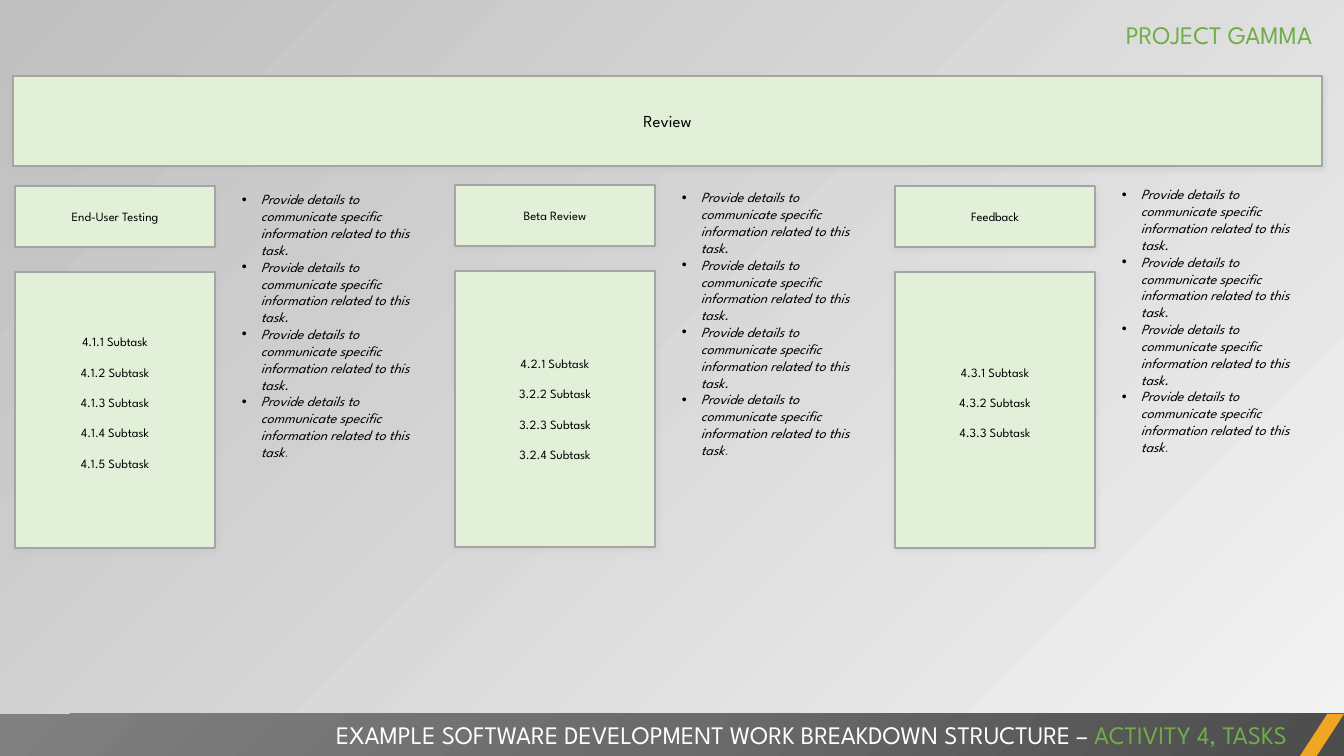
from pptx import Presentation
from pptx.dml.color import RGBColor
from pptx.enum.shapes import MSO_SHAPE as Shape
from pptx.enum.text import MSO_ANCHOR as Anchor, PP_ALIGN as Align
from pptx.oxml import parse_xml
from pptx.oxml.ns import nsdecls
from pptx.util import Pt

PX = 914400 / 100.8
FONT = "League Spartan"
COLORS = {
    "black": "000000", "white": "FFFFFF", "green": "70AD47", "blue": "2E75B6",
    "box": "E2F0D9", "border": "A5A5A5", "shadow": "BFBFBF", "accent": "F0A622",
    "light": "F2F2F2", "grey": "BFBFBF",
    "bar dark": "4C4C4C", "bar middle": "6B6B6B", "bar light": "808080",
}
DETAIL = "Provide details to communicate specific information related to this task"


def write(shape, paragraphs, size=9, align=Align.CENTER, anchor=Anchor.MIDDLE,
          italic=False, bullet=False, gap=0, blank_below=0):
    """Fill a shape with paragraphs, each a list of (text, colour name)."""
    frame = shape.text_frame
    frame.word_wrap = True
    frame.vertical_anchor = anchor
    frame.margin_bottom = round((5 + blank_below) * PX)
    for i, runs in enumerate(paragraphs):
        para = frame.add_paragraph() if i else frame.paragraphs[0]
        para.alignment = align
        if i < len(paragraphs) - 1:
            para.space_after = Pt(gap)
        if bullet:
            props = para._p.get_or_add_pPr()
            props.set("marL", str(round(19 * PX)))
            props.set("indent", str(round(-19 * PX)))
            props.append(parse_xml(f'<a:buFont {nsdecls("a")} typeface="Arial"/>'))
            props.append(parse_xml(f'<a:buChar {nsdecls("a")} char="•"/>'))
        for text, color in runs:
            run = para.add_run()
            run.text = text
            run.font.name = FONT
            run.font.size = Pt(size)
            run.font.italic = italic
            run.font.color.rgb = RGBColor.from_string(COLORS[color])


def add_part(kind, x, y, w, h, fill=None, framed=False):
    """Add a text box (kind None) or a preset shape, placed in px."""
    place = [round(v * PX) for v in (x, y, w, h)]
    if kind is None:
        return slide.shapes.add_textbox(*place)
    part = slide.shapes.add_shape(kind, *place)
    part.shadow.inherit = False
    part.fill.solid()
    part.fill.fore_color.rgb = RGBColor.from_string(COLORS[fill])
    part.line.fill.background()
    if framed:
        part.line.color.rgb = RGBColor.from_string(COLORS["border"])
        part.line.width = Pt(1)
        part._element.spPr.find(".//{*}effectLst").append(parse_xml(
            f'<a:outerShdw {nsdecls("a")} blurRad="50800" dist="12700" dir="5400000" '
            f'algn="t" rotWithShape="0"><a:srgbClr val="{COLORS["shadow"]}">'
            '<a:alpha val="40000"/></a:srgbClr></a:outerShdw>'))
    return part


prs = Presentation()
prs.slide_width = round(1344 * PX)
prs.slide_height = round(756 * PX)
slide = prs.slides.add_slide(prs.slide_layouts[6])

# Background, light at the bottom right
backdrop = slide.background.fill
backdrop.gradient()
backdrop.gradient_angle = 135
for stop, name in zip(backdrop.gradient_stops, ("light", "grey")):
    stop.color.rgb = RGBColor.from_string(COLORS[name])
light_color = slide._element.find(".//{*}bg").find(".//{*}srgbClr")
light_color.append(parse_xml(f'<a:alpha {nsdecls("a")} val="40000"/>'))

# Activity
activity = add_part(Shape.RECTANGLE, 13, 76, 1309, 90, "box", framed=True)
write(activity, [[("Review", "black")]], size=12)

# Footer bar
bar = add_part(Shape.RECTANGLE, 0, 714, 1344, 42, "bar dark")
stops = "".join(f'<a:gs pos="{pos}"><a:srgbClr val="{COLORS[name]}"/></a:gs>'
                for pos, name in ((0, "bar dark"), (50000, "bar middle"), (100000, "bar light")))
bar_props = bar._element.spPr
bar_props.replace(bar_props.find("{*}solidFill"), parse_xml(
    f'<a:gradFill {nsdecls("a")} rotWithShape="1"><a:gsLst>{stops}</a:gsLst>'
    '<a:path path="circle"><a:fillToRect l="100000" t="100000"/></a:path></a:gradFill>'))
slash = add_part(Shape.PARALLELOGRAM, 1300, 714, 44, 42, "accent")
slash.adjustments[0] = 0.65
footer = add_part(None, 0, 714, 1297, 40)
write(footer, [[("EXAMPLE SOFTWARE DEVELOPMENT WORK BREAKDOWN STRUCTURE – ", "white"),
                ("ACTIVITY 4, TASKS", "green")]],
      size=18, align=Align.RIGHT, anchor=Anchor.TOP)

# Tasks: title, top of title, top of details, subtasks, blank space under them
tasks = [
    ("End-User Testing", 186, 186, ["4.1.1", "4.1.2", "4.1.3", "4.1.4", "4.1.5"], 15),
    ("Beta Review", 185, 184, ["4.2.1", "3.2.2", "3.2.3", "3.2.4"], 0),
    ("Feedback", 186, 181, ["4.3.1", "4.3.2", "4.3.3"], 15),
]
details = [[(DETAIL + ".", "black")]] * 3 + [[(DETAIL, "black"), (".", "blue")]]
for column, (title, top, details_top, numbers, blank) in enumerate(tasks):
    left = 15 + 440 * column
    task = add_part(Shape.RECTANGLE, left, top, 200, 61, "box", framed=True)
    write(task, [[(title, "black")]])
    subtasks = add_part(Shape.RECTANGLE, left, top + 86, 200, 276, "box", framed=True)
    write(subtasks, [[(f"{number} Subtask", "black")] for number in numbers],
          gap=10.8, blank_below=blank)
    notes = add_part(None, left + 217, details_top, 208, 302)
    write(notes, details, size=10, align=Align.LEFT, anchor=Anchor.TOP,
          italic=True, bullet=True)

# Project name
project = add_part(None, 9, 14, 1313, 40)
write(project, [[("PROJECT GAMMA", "green")]], size=18, align=Align.RIGHT, anchor=Anchor.TOP)

prs.save("out.pptx")
